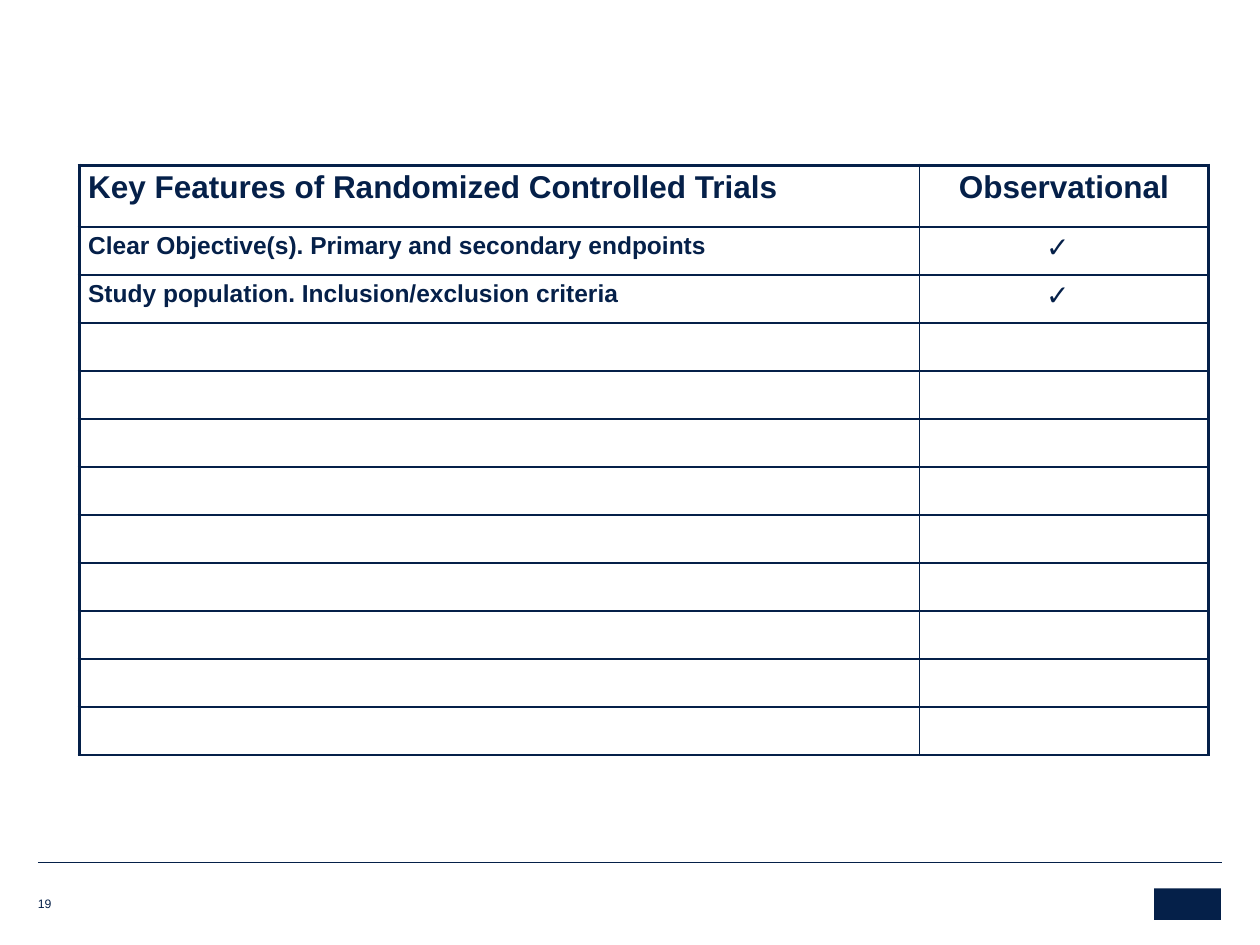
from dataclasses import dataclass
from typing import Any

from lxml.etree import SubElement
from pptx import Presentation
from pptx.dml.color import RGBColor as Rgb
from pptx.enum.shapes import MSO_CONNECTOR as Connector, MSO_SHAPE as Preset
from pptx.enum.text import MSO_ANCHOR as Anchor, PP_ALIGN as Align
from pptx.oxml.ns import qn
from pptx.util import Pt

COLORS = {"navy": "052049"}
NAVY = Rgb.from_string(COLORS["navy"])
FONT = "Arial"
THICK, THIN = 2.25, 1
COLUMN_WIDTHS = (480.2, 164.9)
HEADER_HEIGHT, ROW_HEIGHT = 35.3, 27.43
ROW_COUNT = 12
EMPTY_SIZE = 14


@dataclass
class Entry:
    text: str
    size: float
    bold: bool = True
    align: Align = Align.LEFT
    margin_right: float = 5.04


@dataclass
class Rule:
    left: float
    right: float
    top: float = 492.5


CHECK = Entry("✓", 16, False, Align.CENTER, 12)
ENTRIES = [
    (Entry("Key Features of Randomized Controlled Trials", 18),
     Entry("Observational", 18, align=Align.CENTER)),
    (Entry("Clear Objective(s). Primary and secondary endpoints", 14), CHECK),
    (Entry("Study population. Inclusion/exclusion criteria", 14), CHECK),
]
BLANK = Entry("", EMPTY_SIZE)
RULES = [Rule(28.8, 691.2), Rule(21.6, 698.4)]


def apply_format(target: Any, values: dict[str, Any]) -> None:
    for attribute, value in values.items():
        setattr(target, attribute, value)


def write_text(paragraph: Any, entry: Entry) -> None:
    paragraph.alignment = entry.align
    if not entry.text:
        SubElement(paragraph._p, qn("a:endParaRPr"), sz=str(entry.size * 100))
        return
    run = paragraph.add_run()
    run.text = entry.text
    apply_format(run.font, {"name": FONT, "size": Pt(entry.size), "bold": entry.bold})
    run.font.color.rgb = NAVY


def set_borders(cell: Any, widths: dict[str, float]) -> None:
    properties = cell._tc.get_or_add_tcPr()
    for position, (side, width) in enumerate(widths.items()):
        border = properties.makeelement(qn(f"a:{side}"), {"w": str(int(Pt(width)))})
        fill = SubElement(border, qn("a:solidFill"))
        SubElement(fill, qn("a:srgbClr"), val=COLORS["navy"])
        properties.insert(position, border)


def draw_features(slide: Any) -> None:
    height = HEADER_HEIGHT + (ROW_COUNT - 1) * ROW_HEIGHT
    features = slide.shapes.add_table(
        ROW_COUNT, len(COLUMN_WIDTHS), Pt(45.36), Pt(94.5),
        Pt(sum(COLUMN_WIDTHS)), Pt(height)).table
    apply_format(features, {"first_row": False, "horz_banding": False})
    for column, width in zip(features.columns, COLUMN_WIDTHS):
        column.width = Pt(width)
    last_column = len(COLUMN_WIDTHS) - 1
    for r, row in enumerate(features.rows):
        row.height = Pt(ROW_HEIGHT if r else HEADER_HEIGHT)
        entries = ENTRIES[r] if r < len(ENTRIES) else (BLANK, BLANK)
        for c, (cell, entry) in enumerate(zip(row.cells, entries)):
            apply_format(cell, {
                "margin_left": Pt(5.04), "margin_right": Pt(entry.margin_right),
                "margin_top": Pt(2.88), "margin_bottom": Pt(2.88)})
            cell.fill.background()
            write_text(cell.text_frame.paragraphs[0], entry)
            set_borders(cell, {
                "lnL": THIN if c else THICK,
                "lnR": THICK if c == last_column else THIN,
                "lnT": THIN if r else THICK,
                "lnB": THIN})


def draw_rule(slide: Any, rule: Rule) -> None:
    line = slide.shapes.add_connector(
        Connector.STRAIGHT, Pt(rule.left), Pt(rule.top), Pt(rule.right), Pt(rule.top))
    line.line.color.rgb = NAVY
    line.line.width = Pt(0.25)
    SubElement(line._element.spPr, qn("a:effectLst"))


def draw_emblem(slide: Any) -> None:
    emblem = slide.shapes.add_shape(
        Preset.RECTANGLE, Pt(659.5), Pt(507.6), Pt(38.2), Pt(18))
    emblem.shadow.inherit = False
    emblem.fill.solid()
    emblem.fill.fore_color.rgb = NAVY
    emblem.line.fill.background()


def draw_page_number(slide: Any) -> None:
    frame = slide.shapes.add_textbox(
        Pt(21.6), Pt(508.3), Pt(19.4), Pt(12.2)).text_frame
    apply_format(frame, {
        "word_wrap": True, "vertical_anchor": Anchor.BOTTOM,
        "margin_left": 0, "margin_right": 0, "margin_top": 0, "margin_bottom": 0})
    write_text(frame.paragraphs[0], Entry("19", 7, False))


def main() -> None:
    deck = Presentation()
    apply_format(deck, {"slide_width": Pt(720), "slide_height": Pt(540)})
    slide = deck.slides.add_slide(deck.slide_layouts[6])
    for rule in RULES:
        draw_rule(slide, rule)
    draw_emblem(slide)
    draw_features(slide)
    draw_page_number(slide)
    deck.save("out.pptx")


if __name__ == "__main__":
    main()
